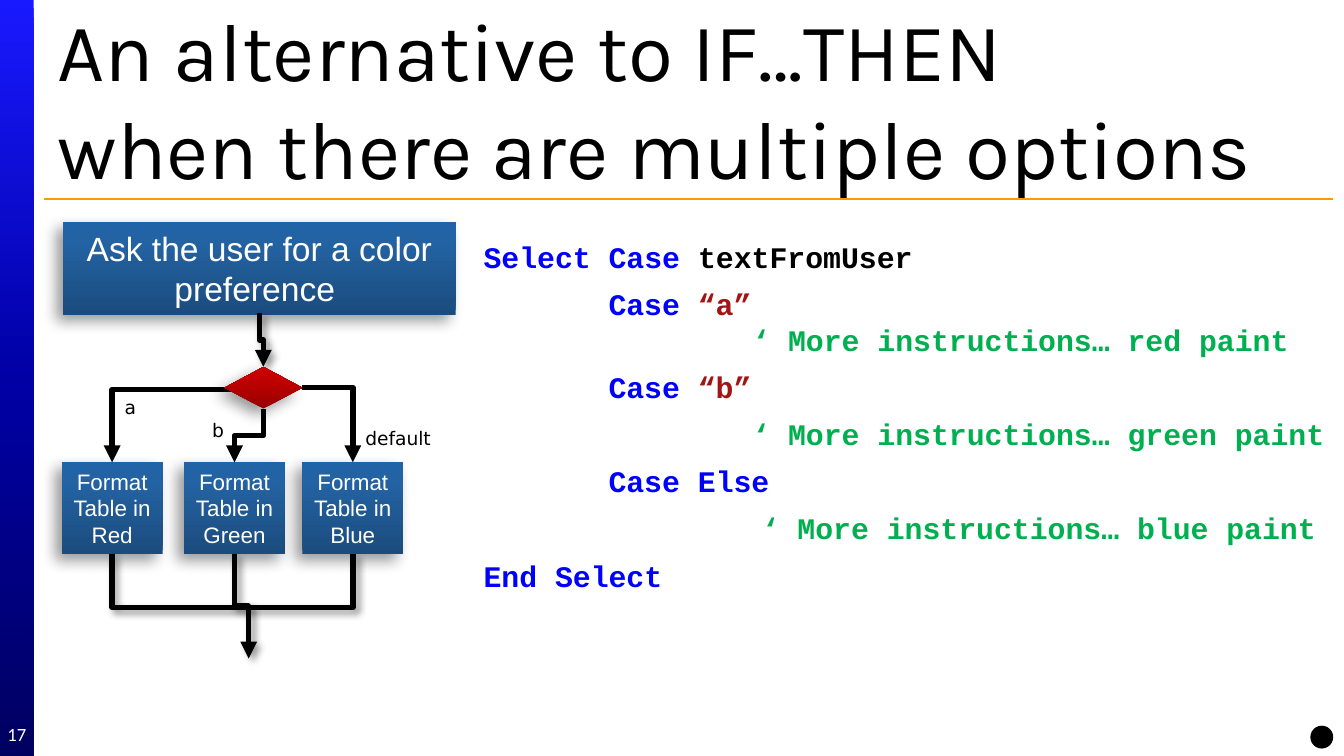
from pptx import Presentation
from pptx.dml.color import RGBColor
from pptx.enum.shapes import MSO_CONNECTOR, MSO_SHAPE
from pptx.enum.text import MSO_ANCHOR, MSO_AUTO_SIZE, PP_ALIGN
from pptx.oxml.ns import qn
from pptx.util import Inches, Pt
from lxml import etree

ELBOW = MSO_CONNECTOR.ELBOW
RECT, OVAL = MSO_SHAPE.RECTANGLE, MSO_SHAPE.OVAL
PROCESS, DECISION = MSO_SHAPE.FLOWCHART_PROCESS, MSO_SHAPE.FLOWCHART_DECISION
LEFT, CENTER, MIDDLE, TOP = PP_ALIGN.LEFT, PP_ALIGN.CENTER, MSO_ANCHOR.MIDDLE, MSO_ANCHOR.TOP

BLACK, WHITE = RGBColor(0, 0, 0), RGBColor(255, 255, 255)
ORANGE = RGBColor(0xFF, 0x99, 0x00)
KEYWORD = RGBColor(0, 0, 0xFF)
STRING = RGBColor(0xA3, 0x15, 0x15)
COMMENT = RGBColor(0, 0xB0, 0x50)
BAR_STOPS = [(0, "1919FF"), (50, "0000A5"), (100, "000060")]
BLUE_STOPS = [(0, "1B4C7E"), (80, "2363A3"), (100, "2063A6")]
RED_STOPS = [(0, "980000"), (80, "C60000"), (100, "C70000")]
SHAPE_SHADOW = (8, 5, 135)  # blur, distance, angle
LINE_SHADOW = (4, 3, 45)

# Content
TITLE = "An alternative to IF…THEN\vwhen there are multiple options"
PAGE = "17"
QUESTION = "Ask the user for a color preference "
BRANCHES = [("Format Table in Red", 0.46), ("Format Table in Green", 1.37),
            ("Format Table in Blue", 2.25)]
LABELS = [("a", 0.83, 2.9, 0.33), ("b", 1.48, 3.07, 0.33), ("default", 2.62, 3.13, 0.75)]
# Indent of the first line, indent of further lines, coloured runs
CODE = [
    (0, 0, [("Select Case", KEYWORD), (" textFromUser", BLACK)]),
    (0.93, 2, [("Case ", KEYWORD), ("“a”\v", STRING),
               ("‘ More instructions… red paint", COMMENT)]),
    (0.93, 0.93, [("Case ", KEYWORD), ("“b”", STRING)]),
    (2, 2, [("‘ More instructions… green paint", COMMENT)]),
    (0.93, 0.93, [("Case Else", KEYWORD)]),
    (2.07, 2.07, [("‘ More instructions… blue paint", COMMENT)]),
    (0, 0, [("End Select", KEYWORD)]),
]

prs = Presentation()
prs.slide_width = Inches(10)
prs.slide_height = prs.slide_width * 9 // 16
s = prs.slides.add_slide(prs.slide_layouts[5])
SLIDE_H = prs.slide_height / Inches(1)


def child(parent, tag, **attrs):
    return etree.SubElement(parent, qn(tag), {k: str(v) for k, v in attrs.items()})


def add_shadow(effects, blur, dist, angle):
    shadow = child(effects, "a:outerShdw", blurRad=Pt(blur), dist=Pt(dist),
                   dir=angle * 60000, algn="ctr", rotWithShape=0)
    child(child(shadow, "a:srgbClr", val="000000"), "a:alpha", val=40000)


def add_gradient(sp, stops, angle):
    grad = etree.Element(qn("a:gradFill"), {"rotWithShape": "1"})
    stop_list = child(grad, "a:gsLst")
    for pos, color in stops:
        child(child(stop_list, "a:gs", pos=pos * 1000), "a:srgbClr", val=color)
    child(grad, "a:lin", ang=angle * 60000, scaled=0)
    sp._element.spPr.find(qn("a:prstGeom")).addnext(grad)


def add_block(kind, box, stops=None, angle=270, shadow=None):
    sp = s.shapes.add_shape(kind, *map(Inches, box))
    sp.line.fill.background()
    sp.shadow.inherit = False
    if stops:
        add_gradient(sp, stops, angle)
    else:
        sp.fill.solid()
        sp.fill.fore_color.rgb = BLACK
    if shadow:
        add_shadow(sp._element.spPr.find(qn("a:effectLst")), *shadow)
    return sp


def format_run(r, font, size, color, bold=False):
    for name, value in {"name": font, "size": Pt(size), "bold": bold}.items():
        setattr(r.font, name, value)
    r.font.color.rgb = color


def set_text(sp, text, font, size, color, align=LEFT, anchor=TOP, inset=None):
    tf = sp.text_frame
    tf.text = text
    tf.word_wrap, tf.auto_size, tf.vertical_anchor = True, MSO_AUTO_SIZE.NONE, anchor
    if inset is not None:
        for side in ("left", "top", "right", "bottom"):
            setattr(tf, "margin_" + side, Inches(inset))
    for p in tf.paragraphs:
        p.alignment = align
        for r in p.runs:
            format_run(r, font, size, color)


def add_text(box, *args, **kwargs):
    set_text(s.shapes.add_textbox(*map(Inches, box)), *args, **kwargs)


def add_elbow(start, end, bends, down_first=True, arrow=True, shadow=None):
    (x1, y1), (x2, y2) = start, end
    rotation = 0
    if down_first:  # the preset leaves sideways, so lay it out turned by a quarter
        cx, cy = (x1 + x2) / 2, (y1 + y2) / 2
        half_w, half_h = (y2 - y1) / 2, abs(x2 - x1) / 2
        rotation = 270 if x2 > x1 else 90
        if x2 > x1:
            half_w = -half_w
        x1, y1, x2, y2 = cx - half_w, cy - half_h, cx + half_w, cy + half_h
    cxn = s.shapes.add_connector(ELBOW, *map(Inches, (x1, y1, x2, y2)))
    cxn.line.width = Pt(3)
    cxn.line.color.rgb = BLACK
    props = cxn._element.spPr
    props.find(qn("a:prstGeom")).set("prst", f"bentConnector{bends + 1}")
    if rotation:
        props.find(qn("a:xfrm")).set("rot", str(rotation * 60000))
    if arrow:
        child(props.find(qn("a:ln")), "a:tailEnd", type="triangle")
    effects = child(props, "a:effectLst")
    if shadow:
        add_shadow(effects, *shadow)


# Side bar, page number and title
add_block(RECT, (0, 0, 0.25, SLIDE_H), BAR_STOPS, 90)
add_text((0, 5.31, 0.25, 0.3), PAGE, "Calibri", 10, WHITE, CENTER, MIDDLE, 0)
rule = s.shapes.add_connector(MSO_CONNECTOR.STRAIGHT, *map(Inches, (0.33, 1.48, 9.92, 1.48)))
rule.line.width = Pt(0.75)
rule.line.color.rgb = ORANGE
child(rule._element.spPr, "a:effectLst")
title = s.shapes.title
title.left, title.top, title.width, title.height = map(Inches, (0.33, 0.06, 9.58, 1.33))
set_text(title, TITLE, "Karla", 44, BLACK, LEFT, MIDDLE)

# Code
tf = s.shapes.add_textbox(*map(Inches, (3.5, 1.73, 6.5, 3.39))).text_frame
tf.word_wrap = True
for i, (first, rest, runs) in enumerate(CODE):
    p = tf.add_paragraph() if i else tf.paragraphs[0]
    p.space_before = Pt(6)
    props = p._p.get_or_add_pPr()
    props.set("marL", str(Inches(rest)))
    props.set("indent", str(Inches(first - rest)))
    for text, color in runs:
        r = p.add_run()
        r.text = text.rstrip("\v")
        format_run(r, "Courier New", 16, color, True)
        if text.endswith("\v"):
            p.add_line_break()

# Flowchart boxes
BOX_TOP, BOX_W, BOX_H = 3.44, 0.75, 0.68
BOX_BOTTOM = BOX_TOP + BOX_H
boxes = [(QUESTION, 18, (0.47, 1.65, 2.92, 0.69))]
boxes += [(text, 12, (x, BOX_TOP, BOX_W, BOX_H)) for text, x in BRANCHES]
for text, size, box in boxes:
    sp = add_block(PROCESS, box, BLUE_STOPS, shadow=SHAPE_SHADOW)
    set_text(sp, text, "Arial", size, WHITE, CENTER, MIDDLE, 0.05)

# Flowchart arrows
red, green, blue = [x + BOX_W / 2 for _, x in BRANCHES]
DIAMOND = (1.67, 2.73, 0.58, 0.31)
dx, dy, dw, dh = DIAMOND
mid_x, mid_y = dx + dw / 2, dy + dh / 2
MERGE = (1.83, 4.52)
add_elbow((1.93, 2.33), (mid_x, dy), 2, shadow=LINE_SHADOW)
add_elbow((green, BOX_BOTTOM), (1.85, 4.9), 2, shadow=LINE_SHADOW)
for x in (red, blue):
    add_elbow((x, BOX_BOTTOM), MERGE, 1, arrow=False, shadow=LINE_SHADOW)
add_elbow((1.79, 2.9), (red, BOX_TOP), 1, down_first=False)
add_elbow((mid_x, dy + dh), (green, BOX_TOP), 2)
add_elbow((dx + dw, mid_y), (blue, BOX_TOP), 1, down_first=False)

# Branch labels, decision and corner dot
for text, x, y, w in LABELS:
    add_text((x, y, w, 0.27), text, "DejaVu Sans", 10, BLACK)
add_block(DECISION, DIAMOND, RED_STOPS, shadow=SHAPE_SHADOW)
add_block(OVAL, (9.75, 5.4, 0.17, 0.17))

prs.save("out.pptx")
